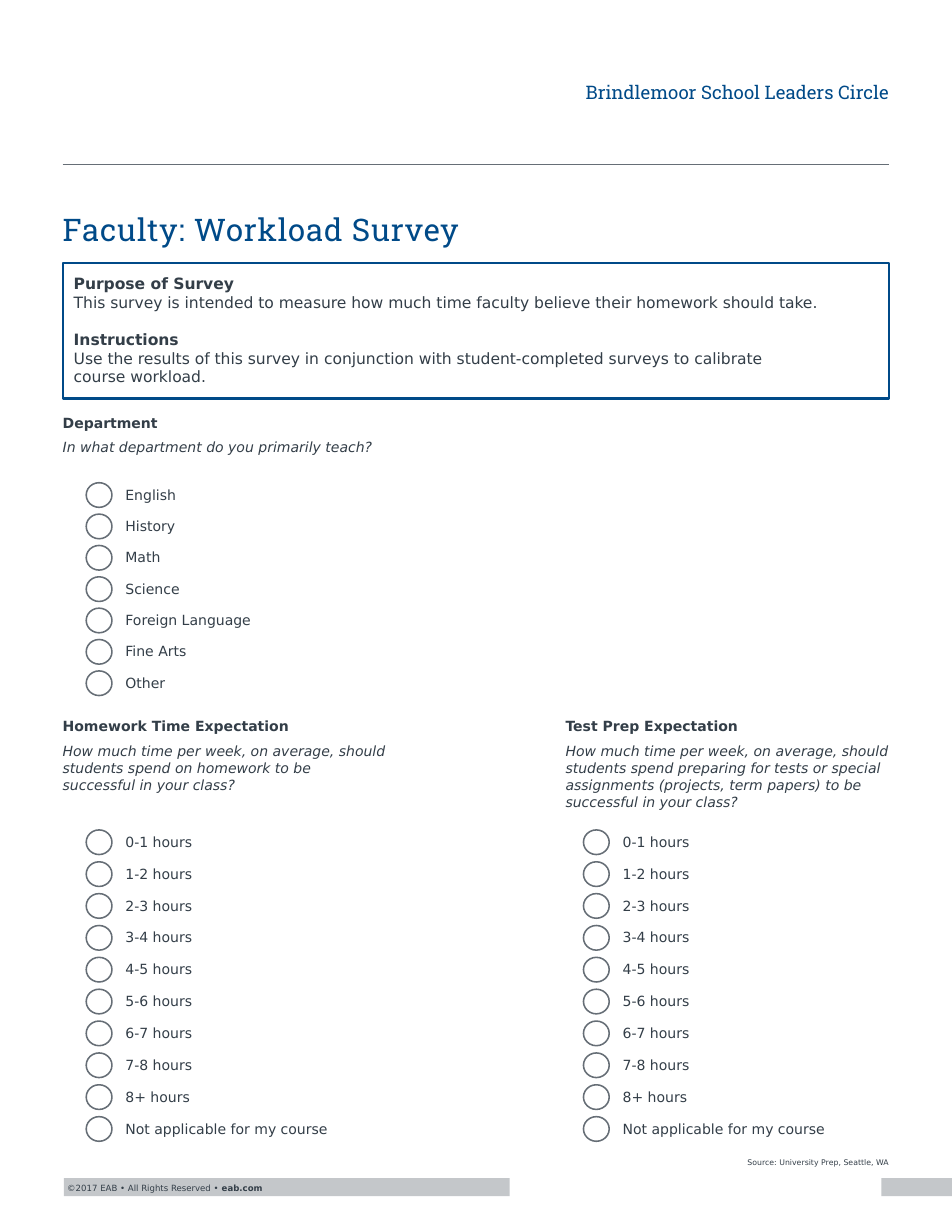
"""Build the one-page faculty workload survey."""
from pptx import Presentation
from pptx.dml.color import RGBColor
from pptx.enum.shapes import MSO_CONNECTOR, MSO_SHAPE
from pptx.enum.text import MSO_ANCHOR, MSO_AUTO_SIZE, PP_ALIGN
from pptx.oxml.ns import qn
from pptx.util import Inches, Pt
from lxml import etree

RECT, OVAL = MSO_SHAPE.RECTANGLE, MSO_SHAPE.OVAL
TOP, MIDDLE, BOTTOM = MSO_ANCHOR.TOP, MSO_ANCHOR.MIDDLE, MSO_ANCHOR.BOTTOM
LEFT, RIGHT = PP_ALIGN.LEFT, PP_ALIGN.RIGHT

COLORS = {"blue": "004A88", "ink": "333E48", "gray": "666E76",
          "band": "C4C7CA", "white": "FFFFFF"}
SANS, SLAB = "DejaVu Sans", "Roboto Slab"

FORUM = "Brindlemoor School Leaders Circle"
TITLE = "Faculty: Workload Survey"
SOURCE = "Source: University Prep, Seattle, WA"
COPYRIGHT = ("©2017 EAB • All Rights Reserved • ", "eab.com")
INTRO = [
    ("Purpose of Survey",
     "This survey is intended to measure how much time faculty believe "
     "their homework should take."),
    ("Instructions",
     "Use the results of this survey in conjunction with student-completed "
     "surveys to calibrate\vcourse workload."),
]
DEPARTMENTS = ["English", "History", "Math", "Science", "Foreign Language",
               "Fine Arts", "Other"]
HOURS = [f"{n}-{n + 1} hours" for n in range(8)]
HOURS += ["8+ hours", "Not applicable for my course"]

WIDTH, HEIGHT = 8.5, 11
MARGIN = 0.56
CONTENT = WIDTH - 2 * MARGIN
COLUMN = 2.9
CIRCLE_W, CIRCLE_H = 0.23, 0.22
LABEL_DX, LABEL_DY, LABEL_W, LABEL_H = 0.35, 0.03, 2.2, 0.15

QUESTIONS = [
    {"heading": "Department",
     "prompt": "In what department do you primarily teach?",
     "box": (MARGIN, 3.7, 4.27, 0.37),
     "choices": DEPARTMENTS, "x": 0.77, "first": 4.31, "last": 5.99},
    {"heading": "Homework Time Expectation",
     "prompt": "How much time per week, on average, should students spend "
               "on homework to be successful in your class?",
     "box": (MARGIN, 6.41, COLUMN, 0.68),
     "choices": HOURS, "x": 0.77, "first": 7.41, "last": 9.97},
    {"heading": "Test Prep Expectation",
     "prompt": "How much time per week, on average, should students spend "
               "preparing for tests or special assignments (projects, term "
               "papers) to be successful in your class?",
     "box": (5.05, 6.41, COLUMN, 0.83),
     "choices": HOURS, "x": 5.21, "first": 7.41, "last": 9.97},
]


def rgb(name):
    return RGBColor.from_string(COLORS[name])


def place(shape, box):
    shape.left, shape.top, shape.width, shape.height = map(Inches, box)


def set_frame(shape, anchor=TOP, inset=0):
    frame = shape.text_frame
    frame.word_wrap = True
    frame.auto_size = MSO_AUTO_SIZE.NONE
    frame.vertical_anchor = anchor
    frame.margin_left = frame.margin_right = Inches(inset)
    frame.margin_top = frame.margin_bottom = Inches(inset)
    return frame


def style(paragraph, size, face=SANS, color="ink", bold=False, italic=False,
          align=LEFT, before=0):
    paragraph.alignment = align
    paragraph.space_before = Pt(before)
    font = paragraph.font
    font.size, font.name = Pt(size), face
    font.bold, font.italic = bold, italic
    font.color.rgb = rgb(color)


def write(frame, lines):
    for i, (text, look) in enumerate(lines):
        paragraph = frame.paragraphs[0] if i == 0 else frame.add_paragraph()
        paragraph.text = text
        style(paragraph, **look)


def add_text(shapes, box, lines):
    write(set_frame(shapes.add_textbox(*map(Inches, box))), lines)


def add_plain(shapes, kind, box, fill=None, line=None, weight=1):
    shape = shapes.add_shape(kind, *map(Inches, box))
    shape.shadow.inherit = False
    if fill:
        shape.fill.solid()
        shape.fill.fore_color.rgb = rgb(fill)
    else:
        shape.fill.background()
    if line:
        shape.line.color.rgb = rgb(line)
        shape.line.width = Pt(weight)
    else:
        shape.line.fill.background()
    return shape


def fill_placeholder(holder, box, text, anchor, **look):
    place(holder, box)
    frame = set_frame(holder, anchor)
    props = frame.paragraphs[0]._p.get_or_add_pPr()
    props.set("marL", "0")
    props.set("indent", "0")
    etree.SubElement(props, qn("a:buNone"))
    write(frame, [(text, look)])


def add_frame(slide):
    shapes = slide.shapes
    rule = shapes.add_connector(MSO_CONNECTOR.STRAIGHT, *map(
        Inches, (MARGIN, 1.47, WIDTH - MARGIN, 1.47)))
    rule.line.color.rgb = rgb("gray")
    rule.line.width = Pt(0.5)
    etree.SubElement(rule._element.spPr, qn("a:effectLst"))

    add_plain(shapes, RECT, (0.57, 10.52, 7.93, 0.16), fill="band")
    add_text(shapes, (0.6, 10.56, 2.7, 0.09), [("", {"size": 5.5})])
    notice = shapes[-1].text_frame.paragraphs[0]
    for text, bold in zip(COPYRIGHT, (False, True)):
        run = notice.add_run()
        run.text, run.font.bold = text, bold
    add_plain(shapes, RECT, (4.55, 10.47, 3.32, 0.24), fill="white")

    title, source, forum = slide.placeholders
    fill_placeholder(source, (5.39, 10.34, 2.55, 0.08), SOURCE, BOTTOM,
                     size=5, align=RIGHT)
    fill_placeholder(title, (MARGIN, 1.87, CONTENT, 0.34), TITLE, BOTTOM,
                     size=20, face=SLAB, color="blue")
    title.text_frame.paragraphs[0].runs[0].font._element.set("spc", "50")
    fill_placeholder(forum, (4.94, 0.62, 3, 0.4), FORUM, MIDDLE,
                     size=12, face=SLAB, color="blue", align=RIGHT)


def add_question(shapes, question):
    add_text(shapes, question["box"], [
        (question["heading"], {"size": 9, "bold": True}),
        (question["prompt"], {"size": 9, "italic": True, "before": 5})])
    choices, x = question["choices"], question["x"]
    pitch = (question["last"] - question["first"]) / (len(choices) - 1)
    group = shapes.add_group_shape().shapes
    for row, choice in enumerate(choices):
        y = question["first"] + row * pitch
        add_plain(group, OVAL, (x, y, CIRCLE_W, CIRCLE_H), line="gray")
        add_text(group, (x + LABEL_DX, y + LABEL_DY, LABEL_W, LABEL_H),
                 [(choice, {"size": 9})])


def add_intro(shapes):
    box = add_plain(shapes, RECT, (MARGIN, 2.35, CONTENT, 1.21),
                    line="blue", weight=1.5)
    lines = []
    for heading, body in INTRO:
        gap = 11.6 if lines else 0
        lines += [(heading, {"size": 10, "bold": True, "before": gap}),
                  (body, {"size": 10})]
    write(set_frame(box, inset=0.1), lines)


def main():
    deck = Presentation()
    deck.slide_width, deck.slide_height = Inches(WIDTH), Inches(HEIGHT)
    slide = deck.slides.add_slide(deck.slide_layouts[3])
    add_frame(slide)
    for question in QUESTIONS:
        add_question(slide.shapes, question)
    add_intro(slide.shapes)
    deck.save("out.pptx")


if __name__ == "__main__":
    main()
